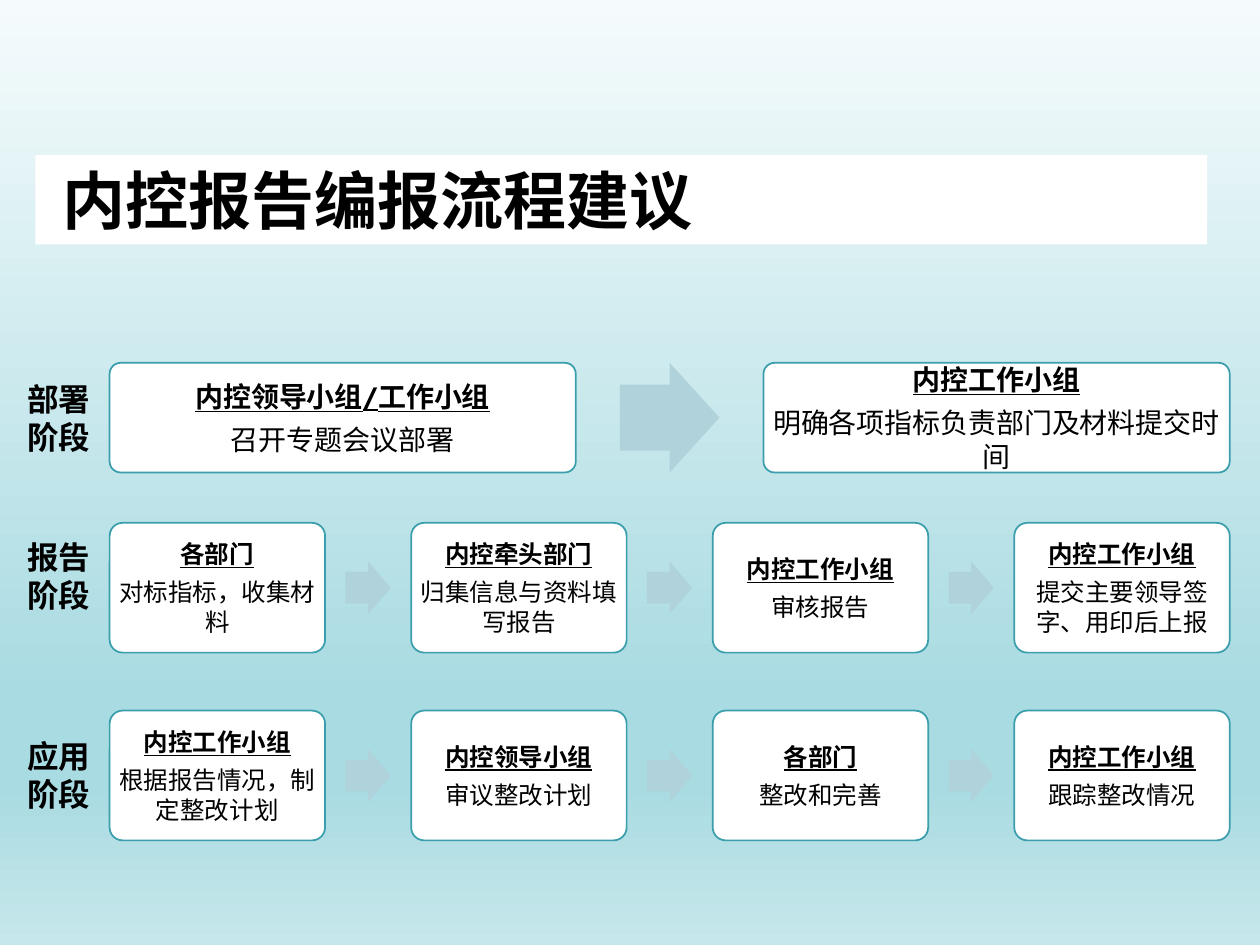
"""Build a slide on the suggested workflow for internal control reports."""
from lxml import etree
from pptx import Presentation
from pptx import util as u
from pptx.dml.color import RGBColor
from pptx.enum import shapes, text
from pptx.oxml.ns import qn

HUES = {"box": "FFFFFF", "edge": "3B9EAC", "arrow": "B0D3DB", "ink": "000000"}
STOPS = [(0, "F5FBFC"), (74, "A9DBE2"), (83, "A9DBE2"), (100, "C6E7EB")]
CJK = "Noto Sans CJK SC"
LEFT, RIGHT = 0.87, 9.76
LARGE = dict(wide=3.7, high=0.87, arrow=(0.79, 0.87), size=16, inset=0.04)
SMALL = dict(wide=1.71, high=1.03, arrow=(0.36, 0.42), size=14, inset=0.03)
ROWS = [
    dict(LARGE, label="部署阶段", label_top=2.97, top=2.88, cards=[
        ("内控领导小组/工作小组", "召开专题会议部署"),
        ("内控工作小组", "明确各项指标负责部门及材料提交时间")]),
    dict(SMALL, label="报告阶段", label_top=4.22, top=4.15, cards=[
        ("各部门", "对标指标，收集材料"),
        ("内控牵头部门", "归集信息与资料填写报告"),
        ("内控工作小组", "审核报告"),
        ("内控工作小组", "提交主要领导签字、用印后上报")]),
    dict(SMALL, label="应用阶段", label_top=5.8, top=5.64, cards=[
        ("内控工作小组", "根据报告情况，制定整改计划"),
        ("内控领导小组", "审议整改计划"),
        ("各部门", "整改和完善"),
        ("内控工作小组", "跟踪整改情况")]),
]


def style(para, size, face, bold, line=False):
    for run in para.runs:
        font = run.font
        font.size, font.name, font.bold, font.underline = u.Pt(size), face, bold, line
        font.color.rgb = RGBColor.from_string(HUES["ink"])
        east = etree.SubElement(font._element, qn("a:ea"))
        east.set("typeface", CJK)


def add_form(kind, left, top, wide, high, hue):
    form = slide.shapes.add_shape(kind, *map(u.Inches, (left, top, wide, high)))
    form.shadow.inherit = False
    form.fill.solid()
    form.fill.fore_color.rgb = RGBColor.from_string(HUES[hue])
    form.line.fill.background()
    return form


deck = Presentation()
deck.slide_width, deck.slide_height = u.Inches(10), u.Inches(7.5)
slide = deck.slides.add_slide(deck.slide_layouts[5])

back = slide.background.fill
back.gradient()
back.gradient_angle = 270
stops = slide.element.find(".//" + qn("a:gsLst"))
for old in list(stops):
    stops.remove(old)
for spot, hue in STOPS:
    stop = etree.SubElement(stops, qn("a:gs"), pos=str(spot * 1000))
    etree.SubElement(stop, qn("a:srgbClr"), val=hue)

title = slide.shapes.title
title.left, title.top = u.Inches(0.28), u.Inches(1.23)
title.width, title.height = u.Inches(9.3), u.Inches(0.71)
title.fill.solid()
title.fill.fore_color.rgb = RGBColor.from_string(HUES["box"])
frame = title.text_frame
frame.text = " 内控报告编报流程建议"
frame.auto_size = text.MSO_AUTO_SIZE.NONE
frame.vertical_anchor = text.MSO_ANCHOR.TOP
frame.paragraphs[0].alignment = text.PP_ALIGN.LEFT
style(frame.paragraphs[0], 36, CJK, True)

for row in ROWS:
    wide, high = row["wide"], row["high"]
    span, tall = row["arrow"]
    step = (RIGHT - LEFT - wide) / (len(row["cards"]) - 1)
    for i, card in enumerate(row["cards"]):
        left = LEFT + i * step
        if i:
            start = left - (step - wide + span) / 2
            arrow = add_form(shapes.MSO_SHAPE.RIGHT_ARROW, start,
                             row["top"] + (high - tall) / 2, span, tall, "arrow")
            arrow.adjustments[0] = 0.6
        box = add_form(shapes.MSO_SHAPE.ROUNDED_RECTANGLE, left, row["top"], wide, high, "box")
        box.adjustments[0] = 0.1
        box.line.color.rgb = RGBColor.from_string(HUES["edge"])
        box.line.width = u.Pt(1)
        frame = box.text_frame
        frame.word_wrap = True
        frame.vertical_anchor = text.MSO_ANCHOR.MIDDLE
        frame.margin_left = frame.margin_right = u.Inches(row["inset"])
        frame.margin_top = frame.margin_bottom = u.Inches(row["inset"])
        frame.text = "\n".join(card)
        for n, para in enumerate(frame.paragraphs):
            para.alignment = text.PP_ALIGN.CENTER
            para.space_after = u.Pt(0.35 * row["size"])
            para._p.get_or_add_pPr().set("hangingPunct", "0")
            style(para, row["size"], "Cabin", n == 0, n == 0)
    label = slide.shapes.add_textbox(u.Inches(0.12), u.Inches(row["label_top"]),
                                     u.Inches(0.8), u.Inches(0.71))
    label.text_frame.word_wrap = True
    label.text_frame.text = row["label"]
    style(label.text_frame.paragraphs[0], 18, CJK, True)

deck.save("out.pptx")
